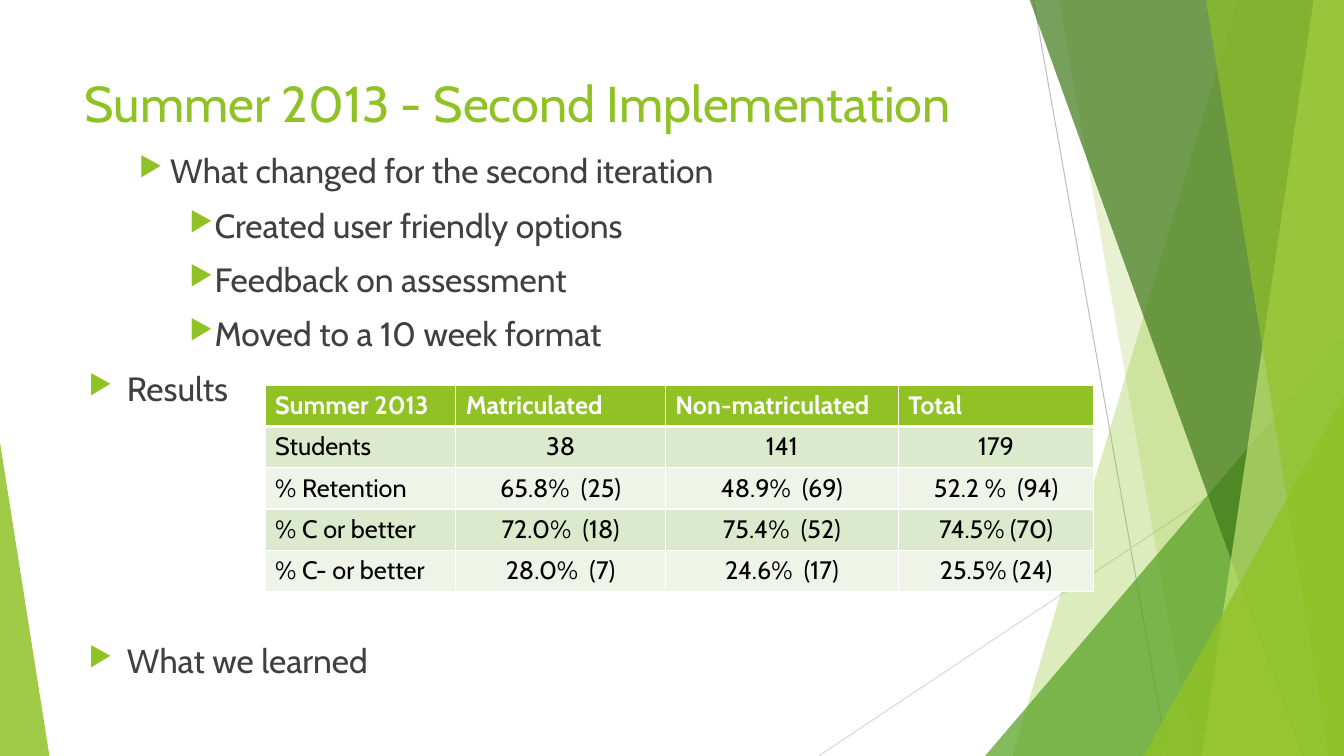
from lxml import etree
from pptx import Presentation
from pptx.dml.color import RGBColor
from pptx.enum.shapes import MSO_CONNECTOR, MSO_SHAPE
from pptx.enum.text import MSO_ANCHOR, PP_ALIGN
from pptx.oxml.ns import qn
from pptx.util import Inches, Pt

LINE = MSO_CONNECTOR.STRAIGHT
TRIANGLE = MSO_SHAPE.ISOSCELES_TRIANGLE
TOP = MSO_ANCHOR.TOP
LEFT, CENTER = PP_ALIGN.LEFT, PP_ALIGN.CENTER

LIME = RGBColor(0x90, 0xC2, 0x26)
GREEN = RGBColor(0x54, 0xA0, 0x21)
DARK = RGBColor(0x3F, 0x78, 0x19)
PALE = RGBColor(0xC0, 0xE4, 0x74)
GRAY = RGBColor(0xBF, 0xBF, 0xBF)
SILVER = RGBColor(0xD9, 0xD9, 0xD9)
INK = RGBColor(0x40, 0x40, 0x40)
BLACK = RGBColor(0, 0, 0)
WHITE = RGBColor(0xFF, 0xFF, 0xFF)
BANDS = RGBColor(0xDB, 0xE9, 0xCD), RGBColor(0xEE, 0xF4, 0xE8)

WIDE, HIGH, EDGE = 13.33, 7.5, -0.01

# top x, foot x, colour, opacity
BLADES = [
    (12.28, 10.04, LIME, 30),
    (10.5, 11.83, LIME, 20),
    (10.21, 12.91, DARK, 70),
    (13.03, 11.92, PALE, 70),
    (11.96, 13.18, LIME, 65),
]
# text, left indent, hanging indent, space before in points
POINTS = [
    ("What changed for the second iteration", 0.81, 0.31, 10),
    ("Created user friendly options", 1.25, 0.25, 10),
    ("Feedback on assessment", 1.25, 0.25, 10),
    ("Moved to a 10 week format", 1.25, 0.25, 10),
    ("Results", 0.38, 0.38, 10),
    ("What we learned", 0.38, 0.38, 165.5),
]
COLS = [1.89, 2.08, 2.31, 1.94]
ROWS = [
    ("Summer 2013", "Matriculated", "Non-matriculated", "Total"),
    ("Students", "38", "141", "179"),
    ("% Retention", "65.8%  (25)", "48.9%  (69)", "52.2 %  (94)"),
    ("% C or better", "72.0%  (18)", "75.4%  (52)", "74.5% (70)"),
    ("% C- or better", "28.0%  (7)", "24.6%  (17)", "25.5% (24)"),
]


def add(parent, tag, **attrs):
    node = etree.SubElement(parent, qn(tag))
    for key, value in attrs.items():
        node.set(key, str(value))
    return node


class Deck:
    font = "Cabin"

    def __init__(self):
        self.prs = Presentation()
        self.prs.slide_width = Inches(WIDE)
        self.prs.slide_height = Inches(HIGH)
        self.slide = self.prs.slides.add_slide(self.prs.slide_layouts[6])
        self.shapes = self.slide.shapes

    def line(self, x1, y1, x2, y2, color):
        line = self.shapes.add_connector(LINE, *map(Inches, (x1, y1, x2, y2)))
        line.line.color.rgb = color
        line.line.width = Pt(0.75)
        add(line._element.spPr, "a:effectLst")

    def paint(self, shape, color, alpha):
        """Give a shape a see-through fill with no outline or shadow."""
        shape.shadow.inherit = False
        shape.line.fill.background()
        shape.fill.solid()
        shape.fill.fore_color.rgb = color
        tone = shape._element.spPr.find(".//" + qn("a:srgbClr"))
        add(tone, "a:alpha", val=alpha * 1000)

    def blade(self, top, foot, color, alpha):
        """Fill from a slanted left side to the slide's right edge."""
        spots = [(WIDE, EDGE), (WIDE, HIGH), (foot, HIGH)]
        form = self.shapes.build_freeform(Inches(top), Inches(EDGE))
        form.add_line_segments([(Inches(x), Inches(y)) for x, y in spots])
        self.paint(form.convert_to_shape(), color, alpha)

    def wedge(self, x, width, height, tip, color, alpha):
        """Stand a right triangle on the slide's bottom edge."""
        box = map(Inches, (x, HIGH - height, width, height))
        shape = self.shapes.add_shape(TRIANGLE, *box)
        shape.adjustments[0] = tip
        self.paint(shape, color, alpha)

    def put(self, para, text, size, color, bold=False):
        """Add one styled run to a paragraph."""
        run = para.add_run()
        run.text = text
        run.font.name = self.font
        run.font.size = Pt(size)
        run.font.bold = bold
        run.font.color.rgb = color

    def frame(self, x, y, width, height):
        box = self.shapes.add_textbox(*map(Inches, (x, y, width, height)))
        box.text_frame.word_wrap = True
        box.text_frame.vertical_anchor = TOP
        return box.text_frame

    def title(self, text):
        frame = self.frame(0.74, 0.67, 9.4, 1.44)
        self.put(frame.paragraphs[0], text, 36, LIME)

    def bullets(self, points):
        frame = self.frame(0.78, 1.44, 9.32, 5.49)
        for i, (text, left, hang, gap) in enumerate(points):
            para = frame.add_paragraph() if i else frame.paragraphs[0]
            para.space_before = Pt(gap)
            props = para._p.get_or_add_pPr()
            props.set("marL", str(Inches(left)))
            props.set("indent", str(-Inches(hang)))
            add(add(props, "a:buClr"), "a:srgbClr", val=LIME)
            add(props, "a:buSzPct", val=80000)
            add(props, "a:buChar", char="▶")
            self.put(para, text, 24, INK)

    def border(self, cell, side, width):
        props = cell._tc.get_or_add_tcPr()
        edge = add(props, "a:ln" + side, w=Pt(width))
        add(add(edge, "a:solidFill"), "a:srgbClr", val=WHITE)

    def table(self, x, y, cols, rows, height):
        size = map(Inches, (x, y, sum(cols), height * len(rows)))
        grid = self.shapes.add_table(len(rows), len(cols), *size).table
        for col, width in zip(grid.columns, cols):
            col.width = Inches(width)
        for r, row in enumerate(rows):
            grid.rows[r].height = Inches(height)
            for c, text in enumerate(row):
                cell = grid.cell(r, c)
                for side in "LRTB":
                    thick = (r, side) in ((0, "B"), (1, "T"))
                    self.border(cell, side, 3 if thick else 1)
                cell.fill.solid()
                cell.fill.fore_color.rgb = BANDS[(r - 1) % 2] if r else LIME
                para = cell.text_frame.paragraphs[0]
                para.alignment = CENTER if r and c else LEFT
                self.put(para, text, 18, BLACK if r else WHITE, r == 0)


def main():
    deck = Deck()
    deck.line(10.25, 0, 11.58, HIGH, GRAY)
    deck.line(WIDE, 4.03, 8.12, HIGH, SILVER)
    for blade in BLADES[:2]:
        deck.blade(*blade)
    deck.wedge(9.77, 3.56, 4.17, 1, GREEN, 72)
    for blade in BLADES[2:]:
        deck.blade(*blade)
    deck.wedge(11.34, 1.99, 3.57, 1, LIME, 80)
    deck.wedge(0, 0.49, 3.11, 0, LIME, 85)
    deck.title("Summer 2013 - Second Implementation")
    deck.bullets(POINTS)
    deck.table(2.63, 3.82, COLS, ROWS, 0.41)
    deck.prs.save("out.pptx")


if __name__ == "__main__":
    main()
